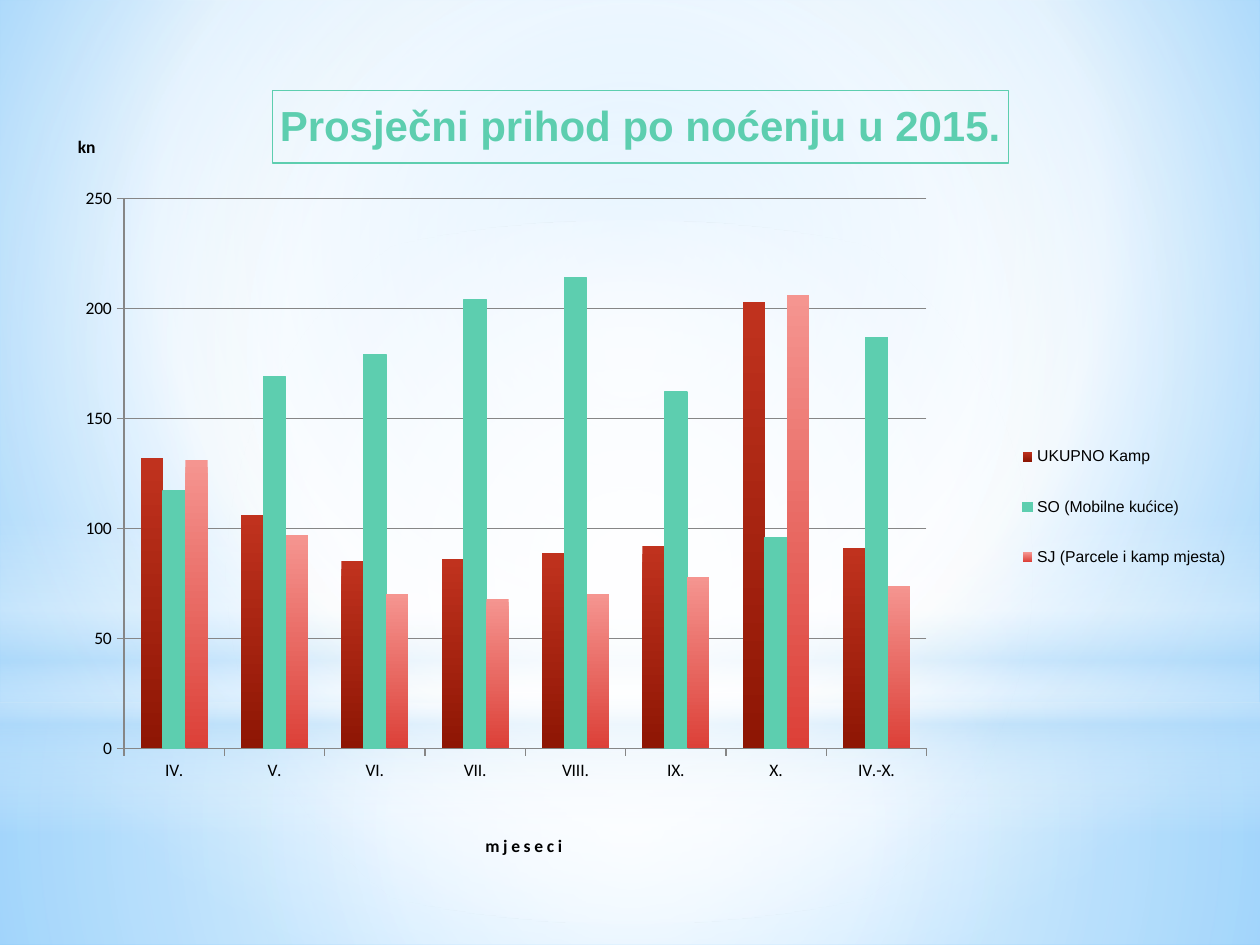
from lxml.etree import SubElement
from pptx import Presentation
from pptx.chart.data import CategoryChartData
from pptx.dml.color import RGBColor
from pptx.enum.chart import XL_CHART_TYPE as ChartType
from pptx.enum.chart import XL_LEGEND_POSITION as LegendPos
from pptx.enum.chart import XL_TICK_MARK as TickMark
from pptx.enum.shapes import MSO_SHAPE as Shape
from pptx.oxml.ns import qn
from pptx.util import Cm, Pt

TEAL, BLACK, GRAY, WHITE, SKY = "5DCEAF", "000000", "868686", "FFFFFF", "B4DCFA"
MONTHS = ["IV.", "V.", "VI.", "VII.", "VIII.", "IX.", "X.", "IV.-X."]
CENTER = (50, 50, 50, 50)

# name, values, bar colours from top to bottom
SERIES = [
    ("UKUPNO Kamp", [132, 106, 85, 86, 89, 92, 203, 91], ("C0321E", "8E1604")),
    ("SO (Mobilne kućice)", [117, 169, 179, 204, 214, 162, 96, 187], (TEAL,)),
    ("SJ (Parcele i kamp mjesta)", [131, 97, 70, 68, 70, 78, 206, 74],
     ("F59590", "DC4038")),
]

# shape, top, height, gradient stops (position, colour, opacity), focus
BACKDROP = [
    (Shape.RECTANGLE, 14.17, 4.88,
     [(0, WHITE, 91), (37, WHITE, 76), (100, SKY, 79)], CENTER),
    (Shape.RECTANGLE, 0, 14.17,
     [(0, WHITE, 89), (48, WHITE, 62), (100, SKY, 79)], CENTER),
    (Shape.RECTANGLE, 10.46, 6.35,
     [(0, WHITE, 0), (29, WHITE, 30), (45, SKY, 40), (55, WHITE, 26),
      (65, SKY, 60), (100, WHITE, 0)], None),
    (Shape.OVAL, 4.45, 14.17, [(0, WHITE, 100), (56, WHITE, 0)], CENTER),
]


def rgb(code):
    return RGBColor.from_string(code)


def set_solid(fill, color):
    fill.solid()
    fill.fore_color.rgb = rgb(color)


def set_line(line, color, width=0.75):
    set_solid(line.fill, color)
    line.width = Pt(width)


def set_gradient(fill, props, stops, focus=None):
    """Fill props with stops: circular around focus, or downwards without one."""
    fill.solid()
    solid = props.find(qn("a:solidFill"))
    grad = props.makeelement(qn("a:gradFill"), {"rotWithShape": "1"})
    stop_list = SubElement(grad, qn("a:gsLst"))
    for pos, color, opacity in stops:
        stop = SubElement(stop_list, qn("a:gs"), pos=str(pos * 1000))
        clr = SubElement(stop, qn("a:srgbClr"), val=color)
        if opacity < 100:
            SubElement(clr, qn("a:alpha"), val=str(opacity * 1000))
    if focus:
        path = SubElement(grad, qn("a:path"), {"path": "circle"})
        sides = {side: str(v * 1000) for side, v in zip("ltrb", focus)}
        SubElement(path, qn("a:fillToRect"), sides)
    else:
        SubElement(grad, qn("a:lin"), ang="5400000", scaled="0")
    props.replace(solid, grad)


def set_font(font, size, color=BLACK, name="Calibri", bold=False):
    font.size, font.name, font.bold = Pt(size), name, bold
    font.color.rgb = rgb(color)


def place(element, index, x, y, w=None, h=None, inner=False):
    """Give a chart part a manual layout, in fractions of the chart."""
    old = element.find(qn("c:layout"))
    if old is not None:
        element.remove(old)
    layout = element.makeelement(qn("c:layout"), {})
    manual = SubElement(layout, qn("c:manualLayout"))
    if inner:
        SubElement(manual, qn("c:layoutTarget"), val="inner")
    for tag in ("xMode", "yMode"):
        SubElement(manual, qn(f"c:{tag}"), val="edge")
    for tag, value in zip("xywh", (x, y, w, h)):
        if value is not None:
            SubElement(manual, qn(f"c:{tag}"), val=str(value))
    element.insert(index, layout)


def add_title(title, text, x, y, size=10, color=BLACK, name="Calibri"):
    tf = title.text_frame
    tf._txBody.bodyPr.set("rot", "0")
    tf._txBody.bodyPr.set("vert", "horz")
    r = tf.paragraphs[0].add_run()
    r.text = text
    set_font(r.font, size, color, name, bold=True)
    place(title._element, 1, x, y)


def add_backdrop(slide, width):
    background = slide.background.fill
    background.solid()
    set_gradient(background, slide._element.xpath(".//p:bgPr")[0],
                 [(0, "9ED5FF", 100), (60, WHITE, 100), (100, "5BB9FF", 100)],
                 (20, 10, 20, 60))
    for kind, top, height, stops, focus in BACKDROP:
        sp = slide.shapes.add_shape(kind, 0, Cm(top), width, Cm(height))
        sp.shadow.inherit = False
        sp.line.fill.background()
        set_gradient(sp.fill, sp._element.spPr, stops, focus)


def format_axis(axis):
    axis.major_tick_mark = TickMark.OUTSIDE
    axis.minor_tick_mark = TickMark.NONE
    set_font(axis.tick_labels.font, 10)
    set_line(axis.format.line, GRAY)


def format_series(plot):
    plot.gap_width, plot.overlap = 150, 0
    plot.vary_by_categories = False
    for ser, (_, _, colors) in zip(plot.series, SERIES):
        fill = ser.format.fill
        if len(colors) == 1:
            set_solid(fill, colors[0])
            set_line(ser.format.line, colors[0])
        else:
            stops = [(0, colors[0], 100), (100, colors[1], 100)]
            set_gradient(fill, ser._element.spPr, stops)


def add_income_chart(slide):
    data = CategoryChartData(number_format="0")
    data.categories = MONTHS
    for name, values, _ in SERIES:
        data.add_series(name, values)
    chart = slide.shapes.add_chart(ChartType.COLUMN_CLUSTERED, Cm(0.51), Cm(1.32),
                                   Cm(24.89), Cm(16.79), data).chart
    set_font(chart.font, 10)
    format_series(chart.plots[0])

    months, income = chart.category_axis, chart.value_axis
    for axis in (months, income):
        format_axis(axis)
    income.minimum_scale, income.maximum_scale, income.major_unit = 0, 250, 50
    income.has_major_gridlines = True
    set_line(income.major_gridlines.format.line, GRAY)

    add_title(months.axis_title, "m j e s e c i", 0.37, 0.92)
    add_title(income.axis_title, "kn", 0.04, 0.08)
    chart.has_title = True
    add_title(chart.chart_title, "Prosječni prihod po noćenju u 2015.",
              0.2, 0.03, 24, TEAL, "Arial")
    set_line(chart.chart_title.format.line, TEAL)

    chart.has_legend = True
    legend = chart.legend
    legend.position = LegendPos.RIGHT
    legend.include_in_layout = False
    set_font(legend.font, 9, name="Arial")
    place(legend._element, 1, 0.79, 0.42, 0.2, 0.22)
    plot_area = chart._chartSpace.find(f".//{qn('c:plotArea')}")
    place(plot_area, 0, 0.08, 0.16, 0.65, 0.66, inner=True)


def main():
    prs = Presentation()
    prs.slide_width, prs.slide_height = Cm(25.4), Cm(19.05)
    slide = prs.slides.add_slide(prs.slide_layouts[6])
    add_backdrop(slide, prs.slide_width)
    add_income_chart(slide)
    prs.save("out.pptx")


if __name__ == "__main__":
    main()
